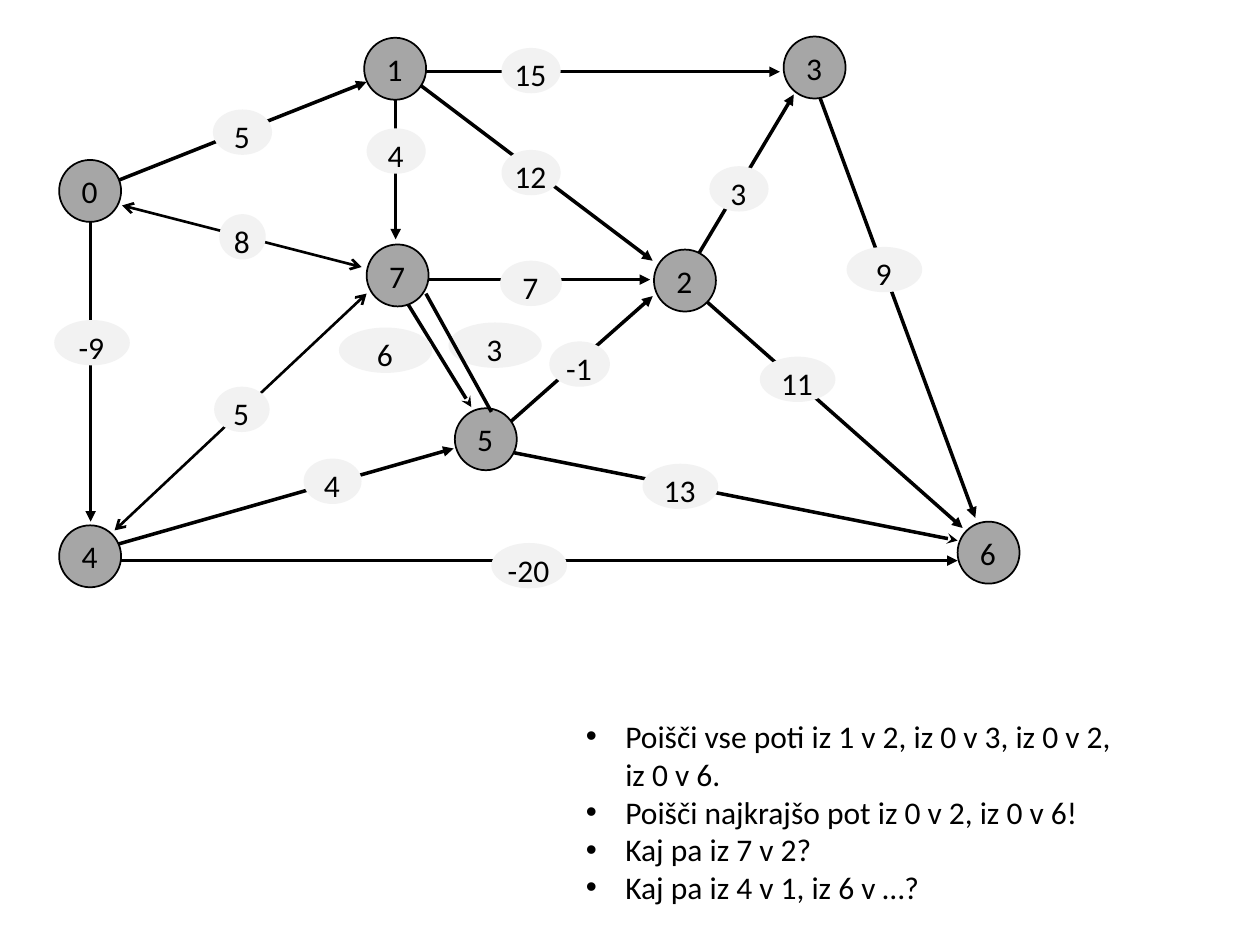
from lxml import etree
from pptx import Presentation
from pptx.dml.color import RGBColor
from pptx.enum.shapes import MSO_CONNECTOR, MSO_SHAPE
from pptx.enum.text import MSO_ANCHOR, MSO_AUTO_SIZE, PP_ALIGN
from pptx.oxml.ns import qn
from pptx.util import Pt

STRAIGHT = MSO_CONNECTOR.STRAIGHT
OVAL = MSO_SHAPE.OVAL
MIDDLE, TOP = MSO_ANCHOR.MIDDLE, MSO_ANCHOR.TOP
CENTER = PP_ALIGN.CENTER
NO_AUTOFIT = MSO_AUTO_SIZE.NONE

BLACK, NODE_GREY, LABEL_GREY = "000000", "A6A6A6", "F2F2F2"
NODE_SIZE, LABEL_HEIGHT = 35.4, 25.9


def color(hex_value):
    return RGBColor.from_string(hex_value)


def add_edge(x1, y1, x2, y2, arrow, both_ends=False):
    """Draw an edge whose arrowhead is at its first point, or at both."""
    edge = slide.shapes.add_connector(STRAIGHT, Pt(x1), Pt(y1), Pt(x2), Pt(y2))
    edge.line.color.rgb = color(BLACK)
    edge.line.width = Pt(1.5 if both_ends else 2)
    properties = edge._element.spPr
    outline = properties.find(qn("a:ln"))
    for end in ("a:headEnd", "a:tailEnd")[:2 if both_ends else 1]:
        etree.SubElement(outline, qn(end), type=arrow)
    etree.SubElement(properties, qn("a:effectLst"))


deck = Presentation()
deck.slide_width, deck.slide_height = Pt(720), Pt(540)
slide = deck.slides.add_slide(deck.slide_layouts[1])
title = slide.shapes.title
title._element.getparent().remove(title._element)

# Edges: arrow point, start point, arrowhead
edges = [
    (547.2, 308.9, 285.1, 257, "stealth"),
    (209.5, 167.8, 65.5, 303.1, "arrow", True),
    (371.5, 159.8, 223.2, 159.8, "triangle"),
    (226.1, 136.8, 226.1, 38.2, "triangle"),
    (557.3, 295.9, 464.4, 44.6, "triangle"),
    (453.6, 54, 387.4, 164.9, "triangle"),
    (550.1, 301.7, 400.3, 169.2, "triangle"),
    (547.2, 320.4, 51.8, 320.4, "triangle"),
    (51.8, 298.1, 51.8, 119.5, "triangle"),
    (206.6, 152.6, 69.8, 117.4, "arrow", True),
    (209.5, 46.8, 56.9, 107.3, "triangle"),
    (373, 149, 231.1, 41.8, "triangle"),
    (445.7, 41, 225.4, 41, "triangle"),
    (269.3, 232.6, 223.2, 157.7, "stealth"),
    (373, 169.2, 280.1, 251.3, "triangle"),
    (259.2, 256.3, 51.8, 315.4, "triangle"),
]
for edge in edges:
    add_edge(*edge)

# Nodes: number, left, top
nodes = [
    ("0", 33.8, 91.4), ("4", 33.8, 300.2), ("7", 209.5, 139.7),
    ("1", 208.1, 21.6), ("3", 447.8, 20.9), ("5", 259.9, 233.3),
    ("2", 373.7, 142.6), ("6", 547.2, 298.1),
]
# Edge weights: value, left, top, width
weights = [
    ("6", 193.7, 187.2, 53.3), ("-9", 31, 182.9, 43.2),
    ("8", 125.3, 122.4, 26.6), ("4", 173.5, 262.1, 33.1),
    ("5", 122.4, 221, 31.7), ("7", 285.8, 149, 35.3),
    ("-1", 313.9, 195.1, 34.6), ("5", 121.7, 62.6, 33.8),
    ("4", 209.5, 73.4, 33.8), ("15", 286.6, 27.4, 33.8),
    ("3", 405.4, 95, 33.8), ("12", 286.6, 85.7, 33.8),
    ("-20", 280.8, 310.3, 43.2), ("13", 367.2, 265, 43.2),
    ("11", 434.2, 203.8, 43.2), ("9", 483.8, 141.1, 43.2),
    ("3", 256.3, 184.3, 53.3),
]
ovals = [(*node, NODE_SIZE, NODE_SIZE, True) for node in nodes]
ovals += [(*weight, LABEL_HEIGHT, False) for weight in weights]
for text, left, top, width, height, is_node in ovals:
    oval = slide.shapes.add_shape(OVAL, Pt(left), Pt(top), Pt(width), Pt(height))
    oval.shadow.inherit = False
    oval.fill.solid()
    oval.fill.fore_color.rgb = color(NODE_GREY if is_node else LABEL_GREY)
    frame = oval.text_frame
    frame.margin_left = frame.margin_top = frame.margin_bottom = 0
    frame.margin_right = Pt(0.7)
    frame.vertical_anchor = MIDDLE
    frame.word_wrap = False
    para = frame.paragraphs[0]
    para.text = text
    para.alignment = CENTER
    para.font.name = "Calibri"
    para.font.size = Pt(18)
    para.font.color.rgb = color(BLACK)
    if is_node:
        oval.line.color.rgb = color(BLACK)
        oval.line.width = Pt(1)
    else:
        oval.line.fill.background()
        para.line_spacing = 1.2

# Tasks
tasks = [
    "Poišči vse poti iz 1 v 2, iz 0 v 3, iz 0 v 2, \viz 0 v 6.",
    "Poišči najkrajšo pot iz 0 v 2, iz 0 v 6!",
    "Kaj pa iz 7 v 2?",
    "Kaj pa iz 4 v 1, iz 6 v …?",
]
body = slide.placeholders[1]
body.left, body.top = Pt(327.6), Pt(406.1)
body.width, body.height = Pt(339.1), Pt(138.2)
frame = body.text_frame
frame.auto_size = NO_AUTOFIT
frame.vertical_anchor = TOP
frame.word_wrap = True
for index, task in enumerate(tasks):
    para = frame.add_paragraph() if index else frame.paragraphs[0]
    para.text = task
    para.space_before = Pt(0)
    para.font.name = "Calibri"
    para.font.size = Pt(18)
    para.font.color.rgb = color(BLACK)
    indents = para._p.get_or_add_pPr()
    indents.set("marL", str(Pt(22.5)))
    indents.set("indent", str(-Pt(22.5)))

# Edge from 7 to 5, in front of the weights
add_edge(280.8, 235.4, 243.4, 167.8, "none")
slide.shapes[-1].line._get_or_add_ln().find(qn("a:headEnd")).set("type", "none")

deck.save("out.pptx")
